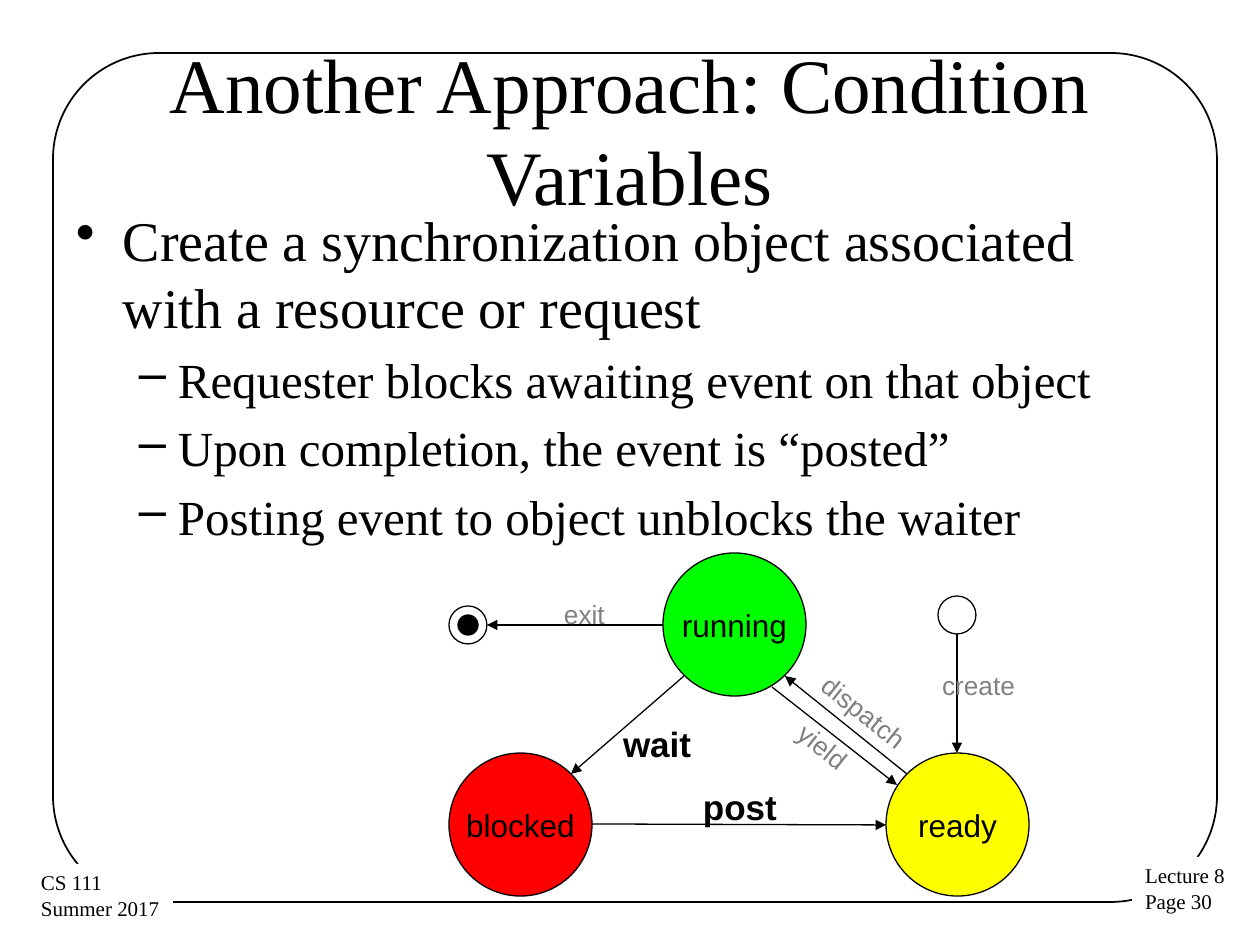
from dataclasses import dataclass

from lxml import etree
from pptx import Presentation
from pptx.dml.color import RGBColor
from pptx.enum.shapes import MSO_CONNECTOR, MSO_SHAPE
from pptx.enum.text import MSO_ANCHOR, MSO_AUTO_SIZE, PP_ALIGN
from pptx.oxml.ns import qn
from pptx.util import Emu, Pt

LEFT, CENTER = PP_ALIGN.LEFT, PP_ALIGN.CENTER
TOP, MIDDLE = MSO_ANCHOR.TOP, MSO_ANCHOR.MIDDLE
NO_FIT = MSO_AUTO_SIZE.NONE
OVAL, RECT, ROUND = MSO_SHAPE.OVAL, MSO_SHAPE.RECTANGLE, MSO_SHAPE.ROUNDED_RECTANGLE
STRAIGHT = MSO_CONNECTOR.STRAIGHT
SCALE = 914400 / 126


@dataclass(frozen=True)
class Theme:
    serif: str = "Times New Roman"
    sans: str = "Arial"
    black: str = "000000"
    white: str = "FFFFFF"
    gray: str = "808080"
    red: str = "FF0000"
    yellow: str = "FFFF00"
    green: str = "00FF00"
    title: int = 44
    body: int = 32
    sub: int = 28
    state: int = 18
    event: int = 20
    label: int = 15
    foot: int = 12
    thin: float = 0.75


THEME = Theme()


def px(n):
    return Emu(round(n * SCALE))


def color(code):
    return RGBColor.from_string(code)


def bullet(para, mark, left, hang):
    props = para._p.get_or_add_pPr()
    props.set("marL", str(px(left)))
    props.set("indent", str(-px(hang)))
    etree.SubElement(props, qn("a:buChar")).set("char", mark)


def write(shape, lines, size, font=THEME.serif, ink=THEME.black, bold=False,
          align=LEFT, anchor=TOP, wrap=False, pad=(13, 6)):
    frame = shape.text_frame
    frame.word_wrap = wrap
    frame.auto_size = NO_FIT
    frame.vertical_anchor = anchor
    frame.margin_left = frame.margin_right = px(pad[0])
    frame.margin_top = frame.margin_bottom = px(pad[1])
    frame.text = lines
    for para in frame.paragraphs:
        para.alignment = align
        para.font.name = font
        para.font.size = Pt(size)
        para.font.bold = bold
        para.font.color.rgb = color(ink)


def draw(slide, kind, box, fill=None, line=None, width=THEME.thin):
    shape = slide.shapes.add_shape(kind, *map(px, box))
    shape.shadow.inherit = False
    if fill:
        shape.fill.solid()
        shape.fill.fore_color.rgb = color(fill)
    else:
        shape.fill.background()
    if line:
        shape.line.color.rgb = color(line)
        shape.line.width = Pt(width)
    else:
        shape.line.fill.background()
    return shape


def circle(slide, x, y, size, fill=None):
    return draw(slide, OVAL, (x, y, size, size), fill, THEME.black)


def state(slide, name, x, y, fill):
    write(circle(slide, x, y, 143, fill), name, THEME.state, font=THEME.sans,
          align=CENTER, anchor=MIDDLE, pad=(11, 6))


def arrow(slide, *ends):
    link = slide.shapes.add_connector(STRAIGHT, *map(px, ends))
    link.line.color.rgb = color(THEME.black)
    link.line.width = Pt(THEME.thin)
    link.line._get_or_add_ln().append(
        etree.Element(qn("a:tailEnd"), type="triangle"))
    etree.SubElement(link._element.spPr, qn("a:effectLst"))


def label(slide, name, box, turn=0, **form):
    text = slide.shapes.add_textbox(*map(px, box))
    text.rotation = turn
    write(text, name, font=THEME.sans, pad=(11, 6), **form)


def frame(slide):
    edge = draw(slide, ROUND, (53, 53, 1164, 849), line=THEME.black, width=1)
    edge.adjustments[0] = 0.125
    for lines, box in (("Lecture 8\nPage 30", (1132, 857, 106, 64)),
                       ("CS 111\nSummer 2017", (28, 864, 145, 64))):
        write(draw(slide, RECT, box, THEME.white), lines, THEME.foot)


def heading(slide, words):
    title = slide.shapes.title
    title.left, title.top, title.width, title.height = map(px, (63, 50, 1134, 158))
    write(title, words, THEME.title, align=CENTER, anchor=MIDDLE, wrap=True)


def points(slide, head, subs):
    body = slide.shapes.add_textbox(*map(px, (63, 199, 1134, 420)))
    body.text_frame.text = "\n".join([head, *subs])
    first, *rest = body.text_frame.paragraphs
    write(body, body.text_frame.text, THEME.body, wrap=True)
    first, *rest = body.text_frame.paragraphs
    for para in rest:
        para.level = 1
        para.space_before = Pt(THEME.sub * 0.2)
        para.font.size = Pt(THEME.sub)
    for para in (first, *rest):
        mark = ("–", 102, 39) if para.level else ("•", 47, 47)
        props = para._p.get_or_add_pPr()
        fonts = props.find(qn("a:defRPr"))
        bullet(para, *mark)
        props.append(fonts)


def diagram(slide):
    state(slide, "blocked", 449, 753, THEME.red)
    state(slide, "ready", 886, 753, THEME.yellow)
    state(slide, "running", 663, 553, THEME.green)
    circle(slide, 449, 606, 38)
    circle(slide, 458, 615, 20, THEME.black)
    circle(slide, 938, 596, 38)
    for ends in ((592, 824, 886, 825), (684, 676, 571, 774),
                 (907, 774, 785, 676), (663, 625, 487, 625),
                 (957, 634, 957, 753), (772, 687, 897, 785)):
        arrow(slide, *ends)
    for name, box, turn in (("exit", (553, 592, 64, 43), 0),
                            ("create", (931, 663, 97, 43), 0),
                            ("dispatch", (804, 691, 122, 43), 38.5),
                            ("yield", (785, 725, 78, 43), 38.5)):
        label(slide, name, box, turn, size=THEME.label, ink=THEME.gray)
    for name, box in (("post", (692, 779, 98, 54)), ("wait", (612, 716, 92, 54))):
        label(slide, name, box, size=THEME.event, bold=True)


def main():
    deck = Presentation()
    deck.slide_width, deck.slide_height = px(1260), px(945)
    slide = deck.slides.add_slide(deck.slide_layouts[5])
    frame(slide)
    heading(slide, "Another Approach: Condition Variables")
    points(slide, "Create a synchronization object associated with a resource or request",
           ("Requester blocks awaiting event on that object",
            "Upon completion, the event is “posted”",
            "Posting event to object unblocks the waiter"))
    diagram(slide)
    deck.save("out.pptx")


if __name__ == "__main__":
    main()
